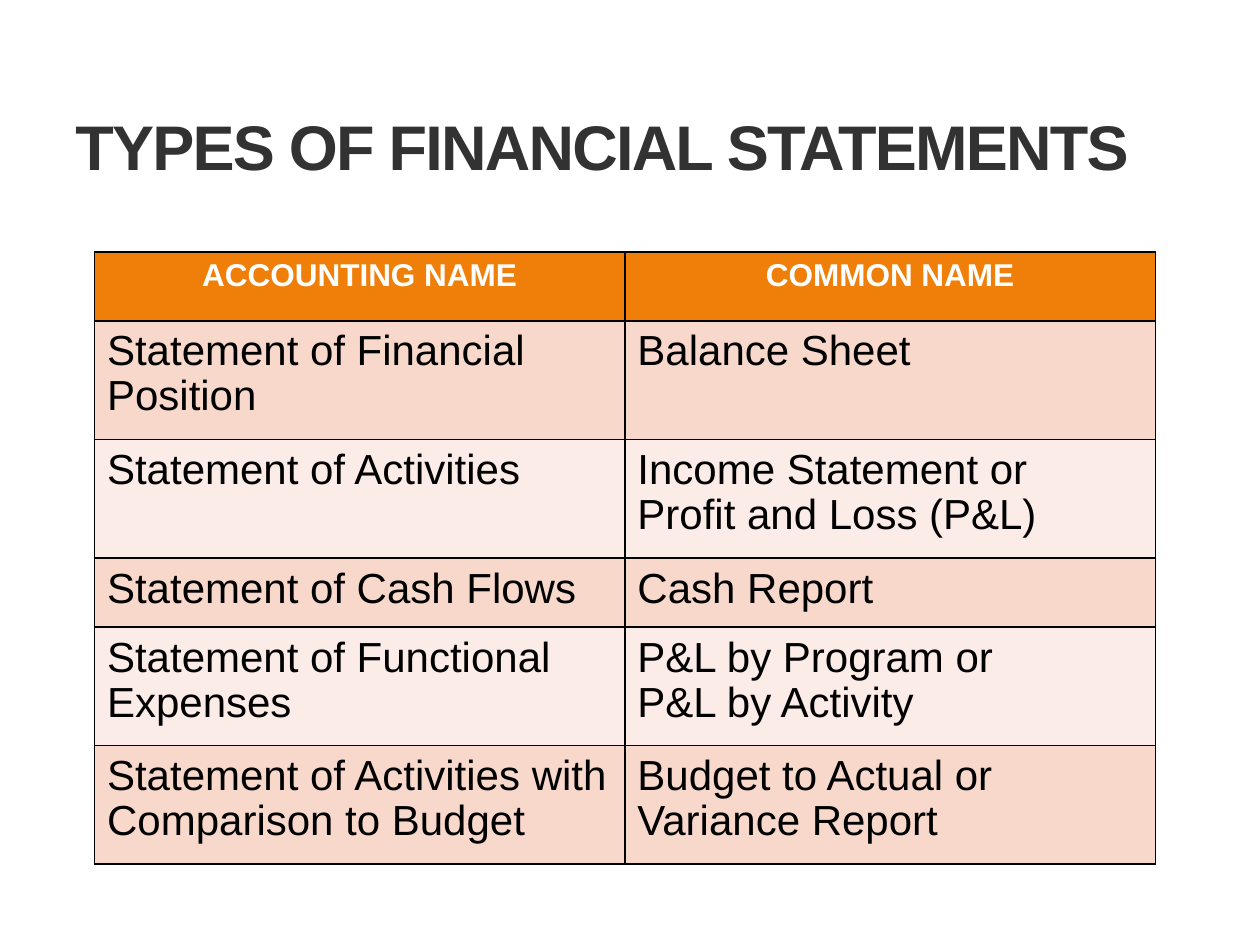
from lxml import etree
from pptx import Presentation
from pptx.dml.color import RGBColor
from pptx.enum import text
from pptx.oxml import ns
from pptx.util import Pt

TITLE = "TYPES OF FINANCIAL STATEMENTS"
HEADS = ("ACCOUNTING NAME", "COMMON NAME")
# One row per statement; each cell is a list of paragraphs
ROWS = [
    (["Statement of Financial Position"], ["Balance Sheet"]),
    (["Statement of Activities"],
     ["Income Statement or", "Profit and Loss (P&L)"]),
    (["Statement of Cash Flows"], ["Cash Report"]),
    (["Statement of Functional Expenses"],
     ["P&L by Program or", "P&L by Activity"]),
    (["Statement of Activities with Comparison to Budget"],
     ["Budget to Actual or Variance Report"]),
]
LOW, TALL = 39.4, 67.8
HEIGHTS = [LOW, TALL, TALL, LOW, TALL, TALL]
WIDTH = 303.1
HEAD_FILL, BANDS = "F07F09", ("F9D8CC", "FCECE7")


def paint(hue):
    return RGBColor.from_string(hue)


def write(para, words, size, hue, bold):
    run = para.add_run()
    run.text = words
    font = run.font
    font.name, font.size, font.bold = "Arial", Pt(size), bold
    font.color.rgb = paint(hue)
    return run


def frame(cell):
    """Draw a thin black line on all four sides."""
    props = cell._tc.get_or_add_tcPr()
    for side in ("lnL", "lnR", "lnT", "lnB"):
        line = etree.SubElement(props, ns.qn("a:" + side), w=str(Pt(1)))
        fill = etree.SubElement(line, ns.qn("a:solidFill"))
        etree.SubElement(fill, ns.qn("a:srgbClr"), val="000000")


def fill_cell(cell, paras, head, hue):
    frame(cell)
    cell.fill.solid()
    cell.fill.fore_color.rgb = paint(hue)
    body = cell.text_frame
    for i, words in enumerate(paras):
        para = body.add_paragraph() if i else body.paragraphs[0]
        if head:
            para.alignment = text.PP_ALIGN.CENTER
            write(para, words, 18, "FFFFFF", True)
        else:
            cell.margin_top = Pt(5.2)
            para.line_spacing = 0.96
            write(para, words, 24, "000000", False)


def main():
    deck = Presentation()
    deck.slide_width, deck.slide_height = Pt(720), Pt(540)
    slide = deck.slides.add_slide(deck.slide_layouts[6])

    # Title
    box = slide.shapes.add_textbox(Pt(36), Pt(41.76), Pt(648), Pt(77.76))
    body = box.text_frame
    body.word_wrap = True
    body.vertical_anchor = text.MSO_ANCHOR.MIDDLE
    body.margin_top = Pt(8.6)
    run = write(body.paragraphs[0], TITLE, 36, "323232", True)
    run.font._element.set("spc", "-100")

    # Table of names
    grid = slide.shapes.add_table(
        len(HEIGHTS), len(HEADS), Pt(54), Pt(144),
        Pt(WIDTH * len(HEADS)), Pt(sum(HEIGHTS))).table
    for col in grid.columns:
        col.width = Pt(WIDTH)
    for row, high in zip(grid.rows, HEIGHTS):
        row.height = Pt(high)
    for c, words in enumerate(HEADS):
        fill_cell(grid.cell(0, c), [words], True, HEAD_FILL)
    for r, row in enumerate(ROWS):
        for c, paras in enumerate(row):
            fill_cell(grid.cell(r + 1, c), paras, False, BANDS[r % 2])

    deck.save("out.pptx")


if __name__ == "__main__":
    main()
